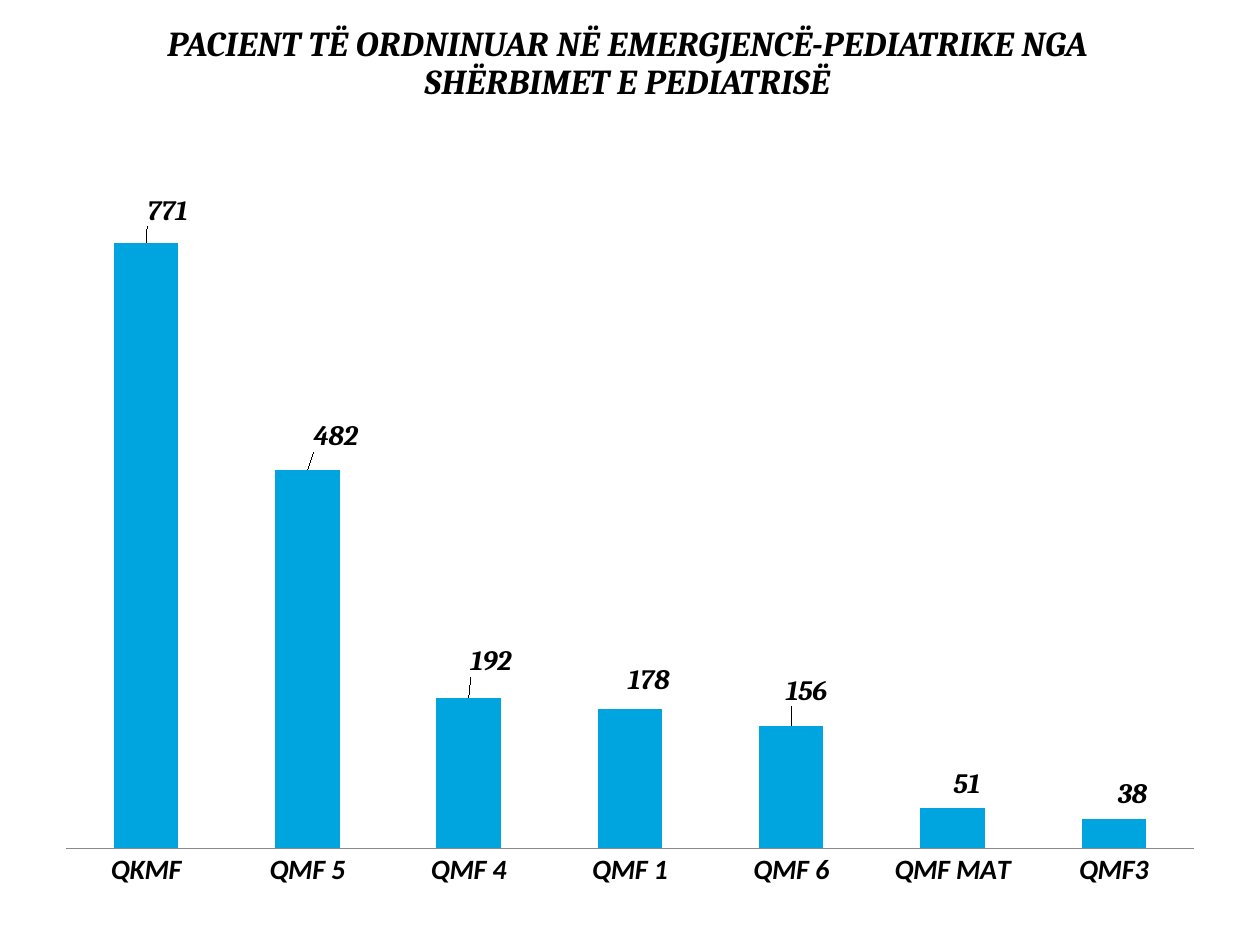
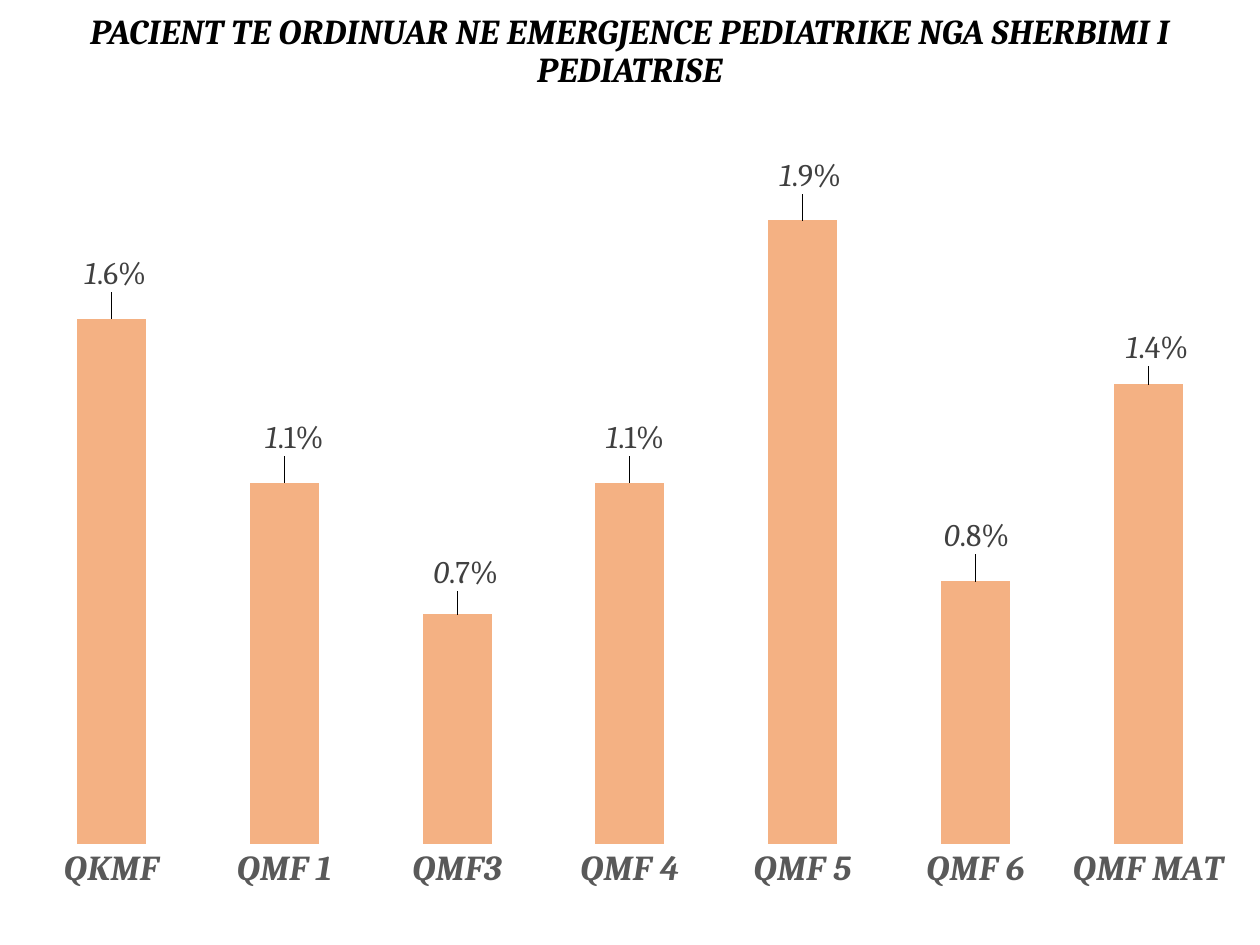
"""Build two slides that chart paediatric emergency patients by health centre."""
from dataclasses import dataclass

from lxml import etree
from pptx import Presentation
from pptx.chart.data import CategoryChartData
from pptx.dml.color import RGBColor
from pptx.enum.chart import XL_CHART_TYPE as ChartType
from pptx.enum.chart import XL_LABEL_POSITION as LabelPosition
from pptx.enum.chart import XL_TICK_LABEL_POSITION as TickLabels
from pptx.enum.chart import XL_TICK_MARK as TickMark
from pptx.enum.text import MSO_ANCHOR as Anchor
from pptx.enum.text import PP_ALIGN as Align
from pptx.oxml.ns import qn
from pptx.util import Inches, Pt

WIDTH, HEIGHT = Inches(10), Inches(7.5)
COLUMNS, ROWS = 60, 45
HEADING, BODY = "Cambria", "Calibri"
CHART_2012 = "http://schemas.microsoft.com/office/drawing/2012/chart"
LABEL_EXTENSION = "{CE6537A1-D6FC-4f65-9D91-7224C49458BB}"
COLORS = {
    "text": "000000",
    "axis": "898989",
    "counts": "00A4DE",
    "rates": "F4B183",
    "rate category": "595959",
    "rate label": "404040",
}


@dataclass
class ColumnStyle:
    """Look of one column chart; plot box in percent of the chart."""
    bars: str
    maximum: float
    plot_box: tuple
    category_font: tuple
    label_font: tuple
    axis_line: bool = False
    percent: bool = False


def grid_box(left, top, width, height):
    """Turn grid columns and rows into slide lengths."""
    column, row = WIDTH / COLUMNS, HEIGHT / ROWS
    return [int(n) for n in (left * column, top * row, width * column, height * row)]


def set_font(font, name, size, color, bold=True, italic=True):
    """Apply one text style."""
    font.name, font.size = name, Pt(size)
    font.bold, font.italic = bold, italic
    font.color.rgb = RGBColor.from_string(COLORS[color])


def add_title(slide, box, text):
    """Add the centred bold italic heading."""
    frame = slide.shapes.add_textbox(*grid_box(*box)).text_frame
    frame.word_wrap = True
    frame.vertical_anchor = Anchor.MIDDLE
    paragraph = frame.paragraphs[0]
    paragraph.alignment, paragraph.line_spacing = Align.CENTER, 0.9
    run = paragraph.add_run()
    run.text = text
    set_font(run.font, HEADING, 20, "text")


def place(parent, index, **percents):
    """Give a chart part a manual layout in percent of the chart."""
    for old in parent.findall(qn("c:layout")):
        parent.remove(old)
    layout = etree.Element(qn("c:layout"))
    manual = etree.SubElement(layout, qn("c:manualLayout"))
    if "w" in percents:
        for tag, value in (("layoutTarget", "inner"), ("xMode", "edge"), ("yMode", "edge")):
            etree.SubElement(manual, qn(f"c:{tag}")).set("val", value)
    for tag, value in percents.items():
        etree.SubElement(manual, qn(f"c:{tag}")).set("val", str(value / 100))
    parent.insert(index, layout)


def hide_leader_lines(labels):
    """Turn off the lines between shifted labels and their columns."""
    for old in labels.findall(qn("c:showLeaderLines")):
        labels.remove(old)
    extensions = etree.SubElement(labels, qn("c:extLst"))
    extension = etree.SubElement(
        extensions, qn("c:ext"), nsmap={"c15": CHART_2012}, uri=LABEL_EXTENSION)
    etree.SubElement(extension, f"{{{CHART_2012}}}showLeaderLines").set("val", "0")


def add_labels(chart, values, shifts, style):
    """Label every column and shift each label from its usual place."""
    series = chart.plots[0].series[0]
    series.data_labels.show_value = True
    series.data_labels.position = LabelPosition.OUTSIDE_END
    set_font(series.data_labels.font, *style.label_font)
    for index, value in enumerate(values):
        label = series.points[index].data_label
        if style.percent:
            paragraph = label.text_frame.paragraphs[0]
            whole, decimals = str(value).split(".")
            for text, italic in ((whole, True), (f".{decimals}%", False)):
                run = paragraph.add_run()
                run.text = text
                set_font(run.font, *style.label_font, bold=False, italic=italic)
        else:
            set_font(label.font, *style.label_font)
        label.position = LabelPosition.OUTSIDE_END
    for element, (x, y) in zip(chart.element.xpath(".//c:dLbl"), shifts):
        place(element, 1, x=x, y=y)
    hide_leader_lines(chart.element.xpath(".//c:ser/c:dLbls")[0])


def add_columns(slide, box, rows, style):
    """Add a column chart from rows of category, value and label shift."""
    categories, values, shifts = zip(*rows)
    data = CategoryChartData()
    data.categories = categories
    data.add_series("Series 1", values)
    chart = slide.shapes.add_chart(
        ChartType.COLUMN_CLUSTERED, *grid_box(*box), data).chart
    chart.has_title = chart.has_legend = False
    set_font(chart.font, BODY, 10, "text", bold=False, italic=False)

    plot = chart.plots[0]
    plot.vary_by_categories, plot.gap_width = False, 150
    fill = plot.series[0].format.fill
    fill.solid()
    fill.fore_color.rgb = RGBColor.from_string(COLORS[style.bars])

    value_axis = chart.value_axis
    value_axis.minimum_scale, value_axis.maximum_scale = 0, style.maximum
    value_axis.has_major_gridlines = value_axis.visible = False
    axis = chart.category_axis
    axis.major_tick_mark = axis.minor_tick_mark = TickMark.NONE
    axis.tick_label_position = TickLabels.NEXT_TO_AXIS
    set_font(axis.tick_labels.font, *style.category_font)
    line = axis.format.line
    if style.axis_line:
        line.width = Pt(0.75)
        line.color.rgb = RGBColor.from_string(COLORS["axis"])
    else:
        line.fill.background()

    add_labels(chart, values, shifts, style)
    x, y, w, h = style.plot_box
    place(chart.element.xpath(".//c:plotArea")[0], 0, x=x, y=y, w=w, h=h)


def main():
    """Build and save the presentation."""
    presentation = Presentation()
    presentation.slide_width, presentation.slide_height = WIDTH, HEIGHT
    blank = presentation.slide_layouts[6]

    slide = presentation.slides.add_slide(blank)
    add_title(slide, (4.03, 1, 51.7, 4.1),
              "PACIENT TË ORDNINUAR NË EMERGJENCË-PEDIATRIKE NGA SHËRBIMET E PEDIATRISË")
    counts = [
        ("QKMF", 771, (1.8, -1.4)),
        ("QMF 5", 482, (2.4, -1.6)),
        ("QMF 4", 192, (1.9, -2)),
        ("QMF 1", 178, (1.6, -1)),
        ("QMF 6", 156, (1.3, -1.8)),
        ("QMF MAT", 51, (1.2, -0.5)),
        ("QMF3", 38, (1.6, -0.5)),
    ]
    add_columns(slide, (2, 6, 56, 37), counts, ColumnStyle(
        "counts", 900, (2, 2, 96, 91), (BODY, 16, "text"),
        (HEADING, 16, "text"), axis_line=True))

    slide = presentation.slides.add_slide(blank)
    add_title(slide, (0, 0, 60, 5),
              "PACIENT TE ORDINUAR NE EMERGJENCE PEDIATRIKE NGA SHERBIMI I PEDIATRISE")
    rates = [
        ("QKMF", 1.6, (0.3, -2.8)),
        ("QMF 1", 1.1, (0.8, -2.9)),
        ("QMF3", 0.7, (0.7, -2.4)),
        ("QMF 4", 1.1, (0.4, -2.9)),
        ("QMF 5", 1.9, (0.6, -2.8)),
        ("QMF 6", 0.8, (0.1, -3)),
        ("QMF MAT", 1.4, (0.7, -1.7)),
    ]
    add_columns(slide, (0, 7.5, 60, 35.5), rates, ColumnStyle(
        "rates", 2, (2, 3.95, 96, 88.15), (HEADING, 20, "rate category"),
        (HEADING, 18, "rate label"), percent=True))

    presentation.save("out.pptx")


if __name__ == "__main__":
    main()
